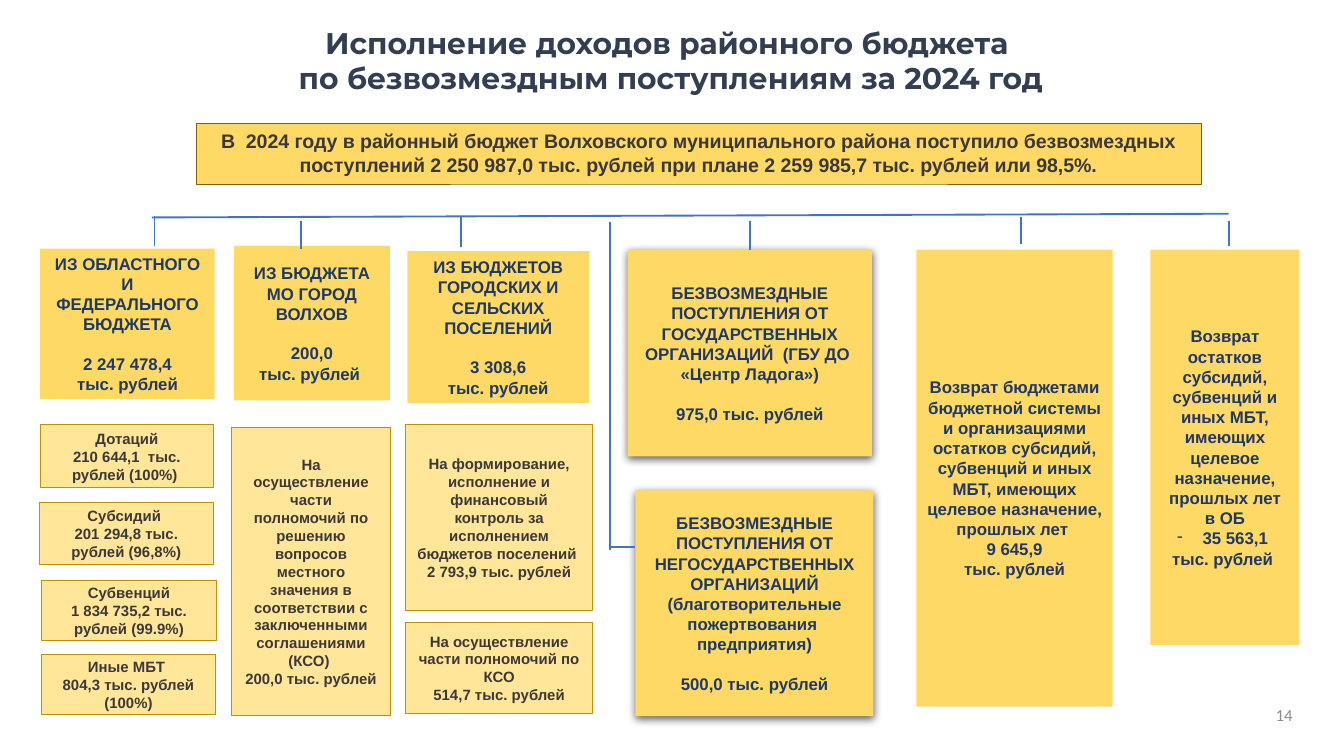
from lxml.etree import SubElement
from pptx import Presentation
from pptx.dml.color import RGBColor
from pptx.enum.shapes import MSO_CONNECTOR, MSO_SHAPE
from pptx.enum.text import MSO_ANCHOR, PP_ALIGN
from pptx.oxml.ns import qn
from pptx.util import Cm, Pt

GOLD = RGBColor(0xFF, 0xD9, 0x66)
PALE_GOLD = RGBColor(0xFF, 0xE6, 0x99)
DARK_GOLD = RGBColor(0xBF, 0x90, 0x00)
BROWN = RGBColor(0x80, 0x60, 0x00)
NAVY = RGBColor(0x20, 0x38, 0x64)
SLATE = RGBColor(0x33, 0x3F, 0x50)
CHARCOAL = RGBColor(0x3B, 0x38, 0x38)
GRAY = RGBColor(0x8C, 0x8C, 0x8C)
BLUE = RGBColor(0x44, 0x72, 0xC4)

prs = Presentation()
prs.slide_width, prs.slide_height = Cm(25.4), Cm(14.29)
slide = prs.slides.add_slide(prs.slide_layouts[6])


def write(shape, groups, size, color, font="Arial", bold=True,
          align=PP_ALIGN.CENTER, anchor=MSO_ANCHOR.MIDDLE, inset=0.2):
    """Fill a shape with groups of paragraphs, one line of space between groups."""
    frame = shape.text_frame
    frame.word_wrap = True
    frame.vertical_anchor = anchor
    frame.margin_left = frame.margin_right = Cm(inset)
    frame.margin_top = frame.margin_bottom = Cm(0.1)
    paragraph = frame.paragraphs[0]
    for g, group in enumerate(groups):
        for i, text in enumerate(group):
            if g or i:
                paragraph = frame.add_paragraph()
            if g and i == 0:
                paragraph.space_before = Pt(size * 1.15)
            paragraph.alignment = align
            run = paragraph.add_run()
            run.text = text
            run.font.name, run.font.size, run.font.bold = font, Pt(size), bold
            run.font.color.rgb = color


def add_box(place, fill, outline=None):
    box = slide.shapes.add_shape(MSO_SHAPE.RECTANGLE, *map(Cm, place))
    box.shadow.inherit = False
    box.fill.solid()
    box.fill.fore_color.rgb = fill
    if outline is None:
        box.line.fill.background()
    else:
        box.line.color.rgb = outline
        box.line.width = Pt(0.5)
    return box


title = slide.shapes.add_textbox(Cm(1.09), Cm(0.36), Cm(23.19), Cm(1.63))
write(title, [["Исполнение доходов районного бюджета ",
               "по безвозмездным поступлениям за 2024 год"]],
      16, SLATE, font="Montserrat", anchor=MSO_ANCHOR.TOP)

summary = add_box((3.71, 2.34, 19, 1.14), GOLD, BROWN)
write(summary, [["В  2024 году в районный бюджет Волховского муниципального района "
                 "поступило безвозмездных поступлений 2 250 987,0 тыс. рублей "
                 "при плане 2 259 985,7 тыс. рублей или 98,5%."]],
      10.5, CHARCOAL, anchor=MSO_ANCHOR.TOP)

# Sources of receipts: place, text groups, side inset
sources = [
    ((0.76, 4.7, 3.3, 2.84),
     [["ИЗ ОБЛАСТНОГО И ФЕДЕРАЛЬНОГО БЮДЖЕТА"], ["2 247 478,4", "тыс. рублей"]], 0.2),
    ((4.42, 4.65, 2.95, 2.92),
     [["ИЗ БЮДЖЕТА МО ГОРОД ВОЛХОВ"], ["200,0", "тыс. рублей "]], 0.2),
    ((7.7, 4.75, 3.43, 2.87),
     [["ИЗ БЮДЖЕТОВ ГОРОДСКИХ И СЕЛЬСКИХ ПОСЕЛЕНИЙ"], ["3 308,6", "тыс. рублей"]], 0.2),
    ((17.32, 4.72, 3.71, 8.64),
     [["Возврат бюджетами бюджетной системы и организациями остатков субсидий, "
       "субвенций и иных МБТ, имеющих целевое назначение, прошлых лет ",
       "9 645,9", "тыс. рублей"]], 0.2),
    ((21.74, 4.72, 2.82, 7.47),
     [["Возврат остатков субсидий, субвенций и иных МБТ, имеющих целевое "
       "назначение, прошлых лет в ОБ", "35 563,1 ", "тыс. рублей "]], 0.25),
]
for place, groups, inset in sources:
    refund = add_box(place, GOLD)
    write(refund, groups, 9, NAVY, inset=inset)

# The amount in the last column carries a dash bullet
amount = refund.text_frame.paragraphs[1]._p.get_or_add_pPr()
amount.set("marL", str(Cm(0.48)))
amount.set("indent", str(Cm(-0.48)))
SubElement(amount, qn("a:buChar"), char="-")

details = [
    ((0.76, 8.03, 3.28, 1.19), ["Дотаций", "210 644,1  тыс. рублей (100%) "], 0.2),
    ((0.74, 9.5, 3.3, 1.17), ["Субсидий ", "201 294,8 тыс. рублей (96,8%)"], 0.2),
    ((0.79, 10.97, 3.3, 1.14), ["Субвенций", "1 834 735,2 тыс. рублей (99.9%)"], 0.2),
    ((0.79, 12.37, 3.28, 1.14), ["Иные МБТ ", "804,3 тыс. рублей (100%)"], 0.2),
    ((4.37, 8.08, 3.02, 5.44),
     ["На осуществление части полномочий по решению вопросов местного значения "
      "в соответствии с заключенными соглашениями (КСО) ", "200,0 тыс. рублей"], 0.23),
    ((7.67, 8.03, 3.53, 3.51),
     ["На формирование, исполнение и финансовый контроль за исполнением "
      "бюджетов поселений ", "2 793,9 тыс. рублей"], 0.2),
    ((7.67, 11.76, 3.53, 1.73),
     ["На осуществление части полномочий по КСО", "514,7 тыс. рублей"], 0.2),
]
for place, group, inset in details:
    write(add_box(place, PALE_GOLD, DARK_GOLD), [group], 8, CHARCOAL, inset=inset)

organizations = [
    ((11.86, 4.72, 4.62, 3.91),
     [["БЕЗВОЗМЕЗДНЫЕ ПОСТУПЛЕНИЯ ОТ ГОСУДАРСТВЕННЫХ ОРГАНИЗАЦИЙ  (ГБУ ДО ",
       "«Центр Ладога»)"], ["975,0 тыс. рублей"]]),
    ((12.01, 9.27, 4.5, 4.27),
     [["БЕЗВОЗМЕЗДНЫЕ ПОСТУПЛЕНИЯ ОТ НЕГОСУДАРСТВЕННЫХ ОРГАНИЗАЦИЙ "
       "(благотворительные пожертвования ", "предприятия)"], ["500,0 тыс. рублей"]]),
]
organization_boxes = []
for place, groups in organizations:
    organization = add_box(place, GOLD)
    write(organization, groups, 9, NAVY)
    effects = organization._element.spPr.find(qn("a:effectLst"))
    shadow = SubElement(effects, qn("a:outerShdw"), blurRad=str(Pt(4.5)),
                        dist=str(Pt(1.5)), dir="5400000", algn="t", rotWithShape="0")
    black = SubElement(shadow, qn("a:srgbClr"), val="000000")
    SubElement(black, qn("a:alpha"), val="63000")
    organization_boxes.append(organization)

# Tree: the bus, its drops, and the branch to non-state organizations
branches = [
    (2.87, 4.11, 23.22, 4.04),
    (2.92, 4.09, 2.92, 4.65),
    (5.69, 4.17, 5.69, 4.7),
    (8.71, 4.11, 8.71, 4.67),
    (19.3, 4.11, 19.3, 4.62),
    (23.22, 4.17, 23.22, 4.65),
    (11.53, 4.19, 11.53, 10.39),
    (12.01, 10.34, 11.51, 10.34),
    (14.17, 4.17, 14.17, 4.72),
]
for ends in branches:
    branch = slide.shapes.add_connector(MSO_CONNECTOR.STRAIGHT, *map(Cm, ends))
    branch.line.color.rgb = BLUE
    branch.line.width = Pt(1)
    SubElement(branch._element.spPr, qn("a:effectLst"))
branch.end_connect(organization_boxes[0], 0)

page_number = slide.shapes.add_textbox(Cm(22.5), Cm(13.13), Cm(2.13), Cm(0.76))
write(page_number, [["14"]], 9, GRAY, font="Calibri", bold=False, align=PP_ALIGN.RIGHT)

prs.save("out.pptx")
